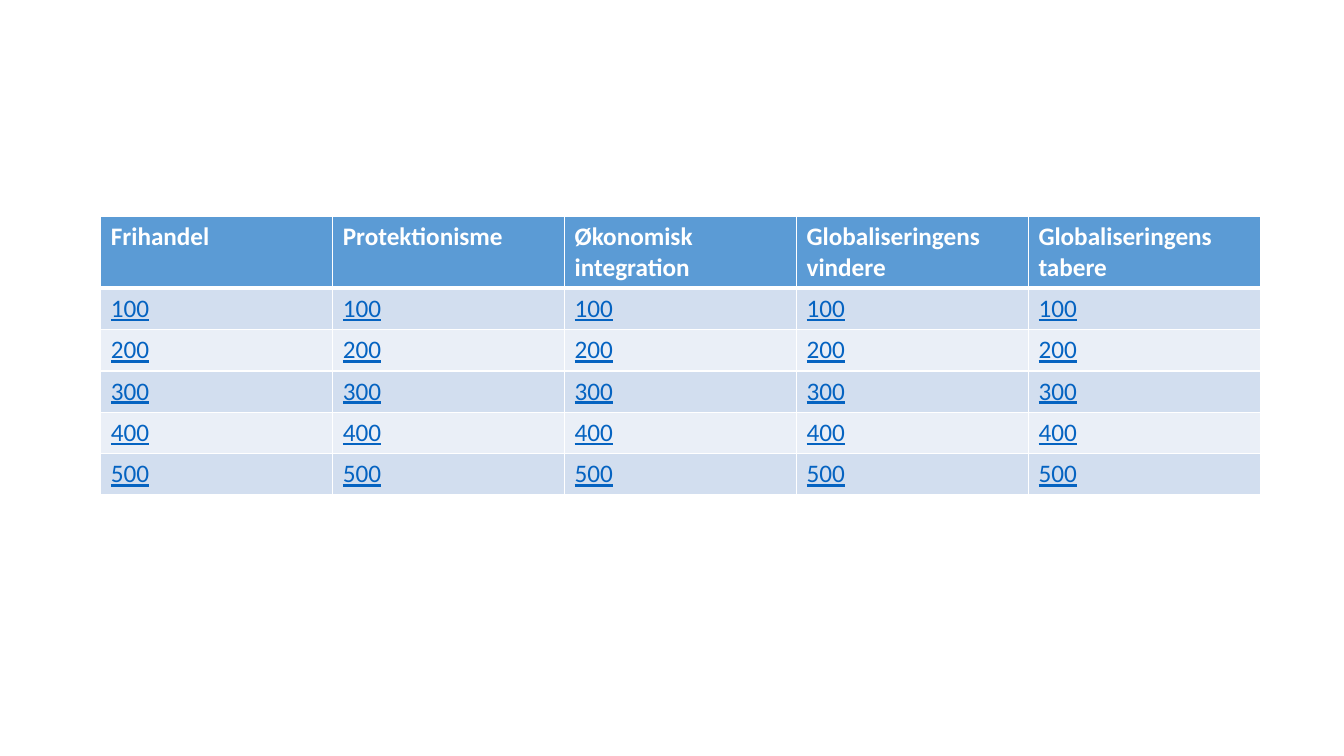
from lxml import etree
from pptx import Presentation
from pptx import util as u
from pptx.dml.color import RGBColor
from pptx.oxml.ns import qn

PX = 9144  # 100 px to the inch
COLORS = {
    "white": "FFFFFF",
    "header": "5B9BD5",
    "band_dark": "D2DEEF",
    "band_light": "EAEFF7",
    "link": "0563C1",
}
TOPICS = ["Frihandel", "Protektionisme", "Økonomisk integration",
          "Globaliseringens vindere", "Globaliseringens tabere"]
POINTS = [100, 200, 300, 400, 500]


class Board:
    font, size = "Calibri", 18

    def __init__(self, slide):
        self.slide = slide

    def border(self, cell, side, width):
        line = etree.SubElement(cell._tc.get_or_add_tcPr(), qn(f"a:ln{side}"),
                                w=str(u.Pt(width)))
        fill = etree.SubElement(line, qn("a:solidFill"))
        etree.SubElement(fill, qn("a:srgbClr"), val=COLORS["white"])

    def cell(self, cell, label, fill, color, header, top, bottom):
        for side, width in (("L", 1), ("R", 1), ("T", top), ("B", bottom)):
            self.border(cell, side, width)
        cell.fill.solid()
        cell.fill.fore_color.rgb = RGBColor.from_string(COLORS[fill])
        cell.text_frame.text = label
        font = cell.text_frame.paragraphs[0].runs[0].font
        font.name, font.size = self.font, u.Pt(self.size)
        font.bold, font.underline = header, not header
        font.color.rgb = RGBColor.from_string(COLORS[color])

    def table(self, left, top, column_width, header_height, row_height):
        rows = [TOPICS] + [[str(points)] * len(TOPICS) for points in POINTS]
        table = self.slide.shapes.add_table(
            len(rows), len(TOPICS), left * PX, top * PX,
            column_width * len(TOPICS) * PX,
            (header_height + row_height * len(POINTS)) * PX).table
        for column in table.columns:
            column.width = column_width * PX
        for r, labels in enumerate(rows):
            header = r == 0
            table.rows[r].height = (header_height if header else row_height) * PX
            band = "band_dark" if r % 2 else "band_light"
            for c, label in enumerate(labels):
                self.cell(table.cell(r, c), label,
                          fill="header" if header else band,
                          color="white" if header else "link",
                          header=header,
                          top=3 if r == 1 else 1,
                          bottom=3 if header else 1)


def main():
    deck = Presentation()
    deck.slide_width, deck.slide_height = 1333 * PX, 750 * PX
    board = Board(deck.slides.add_slide(deck.slide_layouts[6]))
    board.table(left=100, top=215, column_width=230,
                header_height=70, row_height=41)
    deck.save("out.pptx")


if __name__ == "__main__":
    main()
